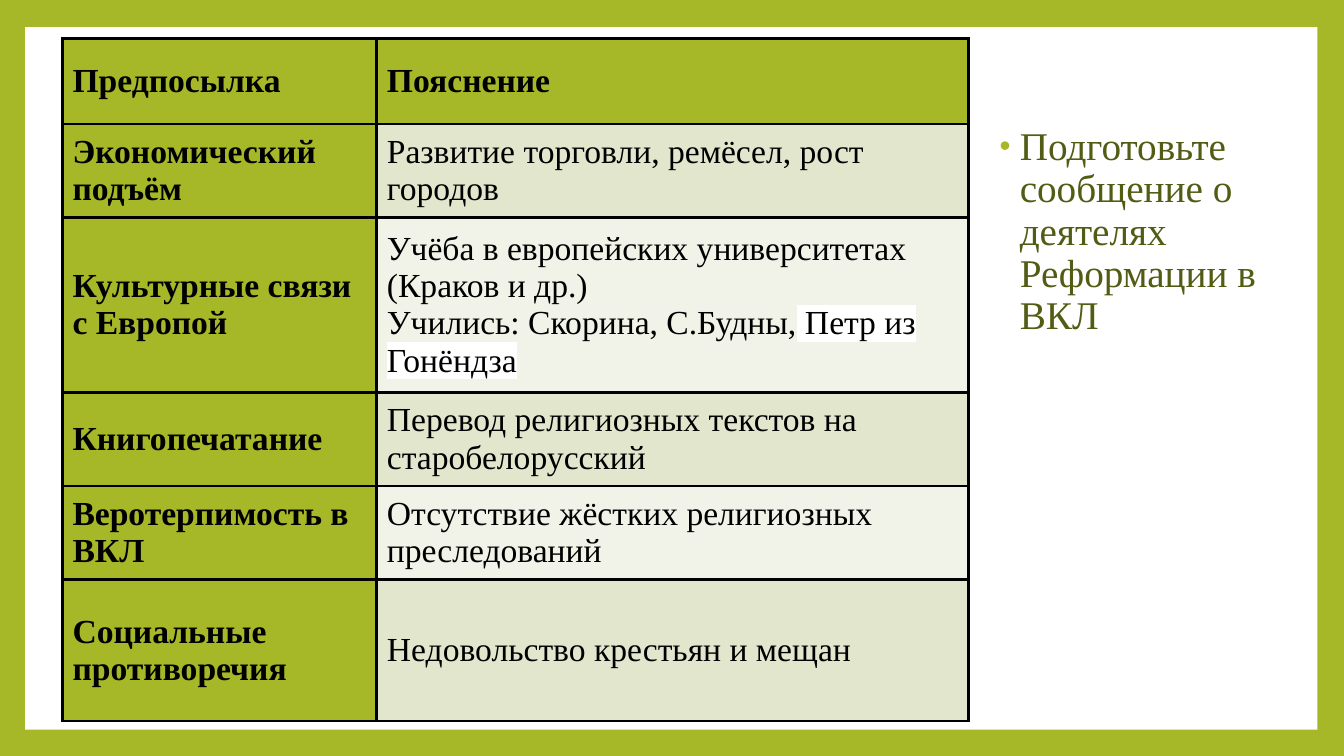
from lxml.etree import SubElement
from pptx import Presentation
from pptx.dml.color import RGBColor
from pptx.enum.shapes import MSO_SHAPE
from pptx.enum.text import MSO_ANCHOR, MSO_AUTO_SIZE
from pptx.oxml.ns import qn
from pptx.util import Pt

COLORS = {"green": "A6B727", "white": "FFFFFF", "black": "000000",
          "olive": "535C14", "band": "E1E6CD", "pale": "F1F3E8"}
FONT = "Times New Roman"
TASK = "Подготовьте сообщение о деятелях Реформации в ВКЛ"
HIGHLIGHTED = " Петр из Гонёндза"
ROWS = [
    (61.2, "Предпосылка", "Пояснение"),
    (67, "Экономический подъём", "Развитие торговли, ремёсел, рост городов"),
    (124.6, "Культурные связи с Европой",
     "Учёба в европейских университетах (Краков и др.)\nУчились: Скорина, С.Будны,"),
    (67, "Книгопечатание", "Перевод религиозных текстов на старобелорусский"),
    (67, "Веротерпимость в ВКЛ", "Отсутствие жёстких религиозных преследований"),
    (100.8, "Социальные противоречия", "Недовольство крестьян и мещан"),
]
COLUMNS = (224.6, 422.6)
HIGHLIGHT_ROW = 2


def paint(fill, name):
    fill.solid()
    fill.fore_color.rgb = RGBColor.from_string(COLORS[name])


def style(span, size, color, bold=False):
    span.font.size = Pt(size)
    span.font.bold = bold
    paint(span.font.fill, color)
    span.font.name = FONT


def add_color(parent, name):
    SubElement(parent, qn("a:srgbClr"), val=COLORS[name])


def highlight(span):
    mark = SubElement(span.font._element, qn("a:highlight"))
    add_color(mark, "white")
    span.font._element.find(qn("a:latin")).addprevious(mark)


def add_borders(cell):
    properties = cell._tc.get_or_add_tcPr()
    for index, side in enumerate(("lnL", "lnR", "lnT", "lnB")):
        line = SubElement(properties, qn(f"a:{side}"), w=str(Pt(2.25)))
        add_color(SubElement(line, qn("a:solidFill")), "black")
        properties.insert(index, line)


def add_frame(page):
    paint(page.background.fill, "green")
    panel = page.shapes.add_shape(MSO_SHAPE.RECTANGLE, Pt(18), Pt(19.4), Pt(923), Pt(501.8))
    panel.shadow.inherit = False
    paint(panel.fill, "white")
    panel.line.fill.background()


def add_task(page):
    box = page.shapes.add_textbox(Pt(703.4), Pt(87.1), Pt(218.2), Pt(404.6))
    frame = box.text_frame
    frame.word_wrap = True
    frame.auto_size = MSO_AUTO_SIZE.TEXT_TO_FIT_SHAPE
    para = frame.paragraphs[0]
    para.text = TASK
    para.line_spacing = 0.9
    para.space_before = Pt(14)
    style(para.runs[0], 28, "olive")
    properties = para._p.get_or_add_pPr()
    properties.set("marL", str(Pt(18)))
    properties.set("indent", str(Pt(-14.4)))
    add_color(SubElement(properties, qn("a:buClr")), "green")
    SubElement(properties, qn("a:buSzPct"), val="80000")
    SubElement(properties, qn("a:buFont"), typeface="Arial")
    SubElement(properties, qn("a:buChar"), char="•")


def add_reasons(page):
    heights = [row[0] for row in ROWS]
    table = page.shapes.add_table(len(ROWS), len(COLUMNS), Pt(44.6), Pt(27.4),
                                  Pt(sum(COLUMNS)), Pt(sum(heights))).table
    table.first_row = table.horz_banding = False
    for column, width in zip(table.columns, COLUMNS):
        column.width = Pt(width)
    for r, (height, *texts) in enumerate(ROWS):
        table.rows[r].height = Pt(height)
        for c, text in enumerate(texts):
            cell = table.cell(r, c)
            heading = r == 0 or c == 0
            paint(cell.fill, "green" if heading else "band" if r % 2 else "pale")
            cell.vertical_anchor = MSO_ANCHOR.MIDDLE
            cell.text_frame.text = text
            for para in cell.text_frame.paragraphs:
                style(para.runs[0], 24, "black", heading)
            add_borders(cell)
    span = table.cell(HIGHLIGHT_ROW, 1).text_frame.paragraphs[-1].add_run()
    span.text = HIGHLIGHTED
    style(span, 24, "black")
    highlight(span)


def main():
    """Build the slide on the causes of the Reformation."""
    deck = Presentation()
    deck.slide_width, deck.slide_height = Pt(960), Pt(540)
    page = deck.slides.add_slide(deck.slide_layouts[6])
    add_frame(page)
    add_task(page)
    add_reasons(page)
    deck.save("out.pptx")


if __name__ == "__main__":
    main()
